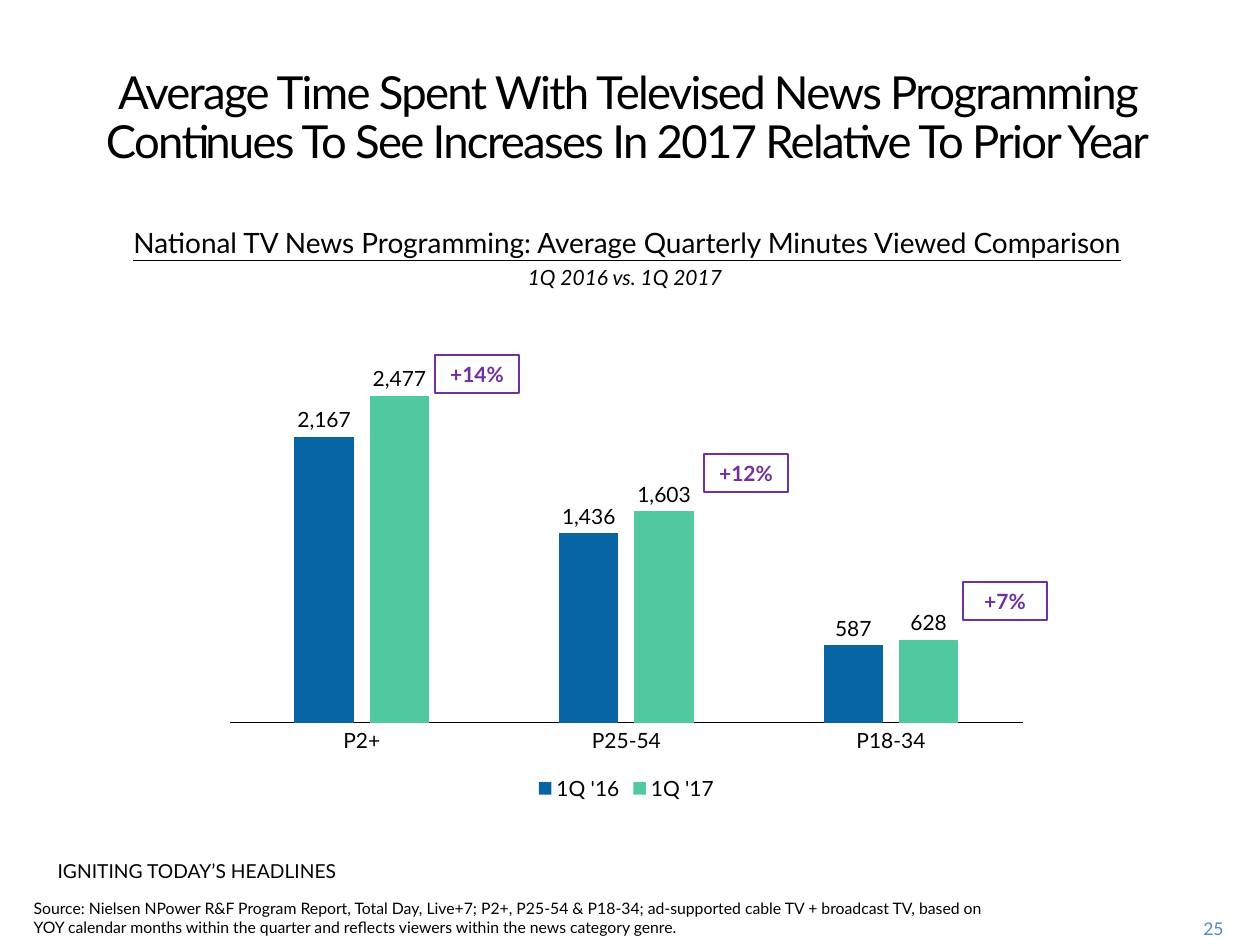
import pptx
import pptx.chart.data
import pptx.dml.color
import pptx.enum.chart
import pptx.enum.shapes
import pptx.enum.text
import pptx.util
import lxml.etree

SCALE = 914400 / 126
THEME = {
    "font": "Lato",
    "black": "000000", "purple": "7030A0", "page": "508ABA",
    "series": ["0765A3", "50C8A0"],
    "title": 26, "heading": 16, "label": 12, "tagline": 11, "number": 10, "source": 9,
}
ALIGN = pptx.enum.text.PP_ALIGN
ANCHOR = pptx.enum.text.MSO_ANCHOR


def place(shape, left, top, width, height):
    """Move a shape to a box given in px."""
    for name, value in zip(("left", "top", "width", "height"), (left, top, width, height)):
        setattr(shape, name, round(value * SCALE))


def write(shape, lines, align=ALIGN.LEFT, anchor=ANCHOR.TOP, color="black", wrap=True):
    """Fill a shape with unbulleted paragraphs of (text, size, extra font values)."""
    frame = shape.text_frame
    frame.word_wrap = wrap
    frame.auto_size = pptx.enum.text.MSO_AUTO_SIZE.NONE
    frame.vertical_anchor = anchor
    for index, (text, size, extra) in enumerate(lines):
        paragraph = frame.add_paragraph() if index else frame.paragraphs[0]
        properties = paragraph._p.get_or_add_pPr()
        properties.set("marL", "0")
        properties.set("indent", "0")
        lxml.etree.SubElement(properties, pptx.oxml.ns.qn("a:buNone"))
        paragraph.alignment = align
        paragraph.space_before = pptx.util.Pt(3 if index else 0)
        font_values = {"name": THEME["font"], "size": pptx.util.Pt(THEME[size]), "bold": False}
        run = paragraph.add_run()
        run.text = text
        for name, value in (font_values | extra).items():
            setattr(run.font, name, value)
        run.font.color.rgb = pptx.dml.color.RGBColor.from_string(THEME[color])


presentation = pptx.Presentation()
presentation.slide_width = pptx.util.Inches(10)
presentation.slide_height = pptx.util.Inches(7.5)
slide = presentation.slides.add_slide(presentation.slide_layouts.get_by_name("Comparison"))
heading, source, tagline, unused = [slide.placeholders[index] for index in (1, 2, 3, 4)]
unused._element.getparent().remove(unused._element)

# Title, chart heading and footer texts
title = slide.shapes.title
place(title, 21, 63, 1213, 86)
write(title, [("Average Time Spent With Televised News Programming Continues To See "
               "Increases In 2017 Relative To Prior Year", "title", {})], ALIGN.CENTER)
title_paragraph = title.text_frame.paragraphs[0]
title_paragraph.line_spacing = pptx.util.Pt(28)
title_paragraph.runs[0]._r.get_or_add_rPr().set("spc", "-100")

place(heading, 21, 219, 1213, 50)
write(heading, [
    ("National TV News Programming: Average Quarterly Minutes Viewed Comparison",
     "heading", {"underline": True}),
    ("1Q 2016 vs. 1Q 2017 ", "label", {"italic": True}),
], ALIGN.CENTER)

place(tagline, 45, 853, 343, 59)
write(tagline, [("IGNITING TODAY’S HEADLINES", "tagline", {})])

place(source, 21, 892, 995, 44)
write(source, [("Source: Nielsen NPower R&F Program Report, Total Day, Live+7; P2+, P25-54 & P18-34; "
                "ad-supported cable TV + broadcast TV, based on YOY calendar months within the "
                "quarter and reflects viewers within the news category genre.", "source", {})])

page_number = slide.shapes.add_textbox(0, 0, 0, 0)
place(page_number, 1159, 912, 77, 32)
write(page_number, [("25", "number", {})], ALIGN.RIGHT, ANCHOR.MIDDLE, "page")

# Column chart
chart_data = pptx.chart.data.CategoryChartData(number_format="#,##0")
chart_data.categories = ["P2+", "P25-54", "P18-34"]
chart_data.add_series("1Q '16", [2167, 1436, 587])
chart_data.add_series("1Q '17", [2477, 1603, 628])
chart_frame = slide.shapes.add_chart(
    pptx.enum.chart.XL_CHART_TYPE.COLUMN_CLUSTERED, 0, 0, 0, 0, chart_data)
place(chart_frame, 213, 317, 827, 489)
chart = chart_frame.chart
black = pptx.dml.color.RGBColor.from_string(THEME["black"])
chart.has_title = False
chart.font.name = THEME["font"]
chart.font.size = pptx.util.Pt(THEME["label"])
chart.font.color.rgb = black

chart.has_legend = True
chart.legend.position = pptx.enum.chart.XL_LEGEND_POSITION.BOTTOM
chart.legend.include_in_layout = False

value_axis = chart.value_axis
axis_values = {"minimum_scale": 0, "maximum_scale": 3000,
               "has_major_gridlines": False, "visible": False}
for name, value in axis_values.items():
    setattr(value_axis, name, value)
category_axis = chart.category_axis
category_axis.major_tick_mark = pptx.enum.chart.XL_TICK_MARK.NONE
category_axis.format.line.color.rgb = black
category_axis.format.line.width = pptx.util.Pt(0.75)

plot = chart.plots[0]
plot_values = {"gap_width": 219, "overlap": -27, "vary_by_categories": False,
               "has_data_labels": True}
for name, value in plot_values.items():
    setattr(plot, name, value)
label_values = {"show_value": True, "number_format": "#,##0", "number_format_is_linked": False,
                "position": pptx.enum.chart.XL_LABEL_POSITION.OUTSIDE_END}
for name, value in label_values.items():
    setattr(plot.data_labels, name, value)
for series, color in zip(plot.series, THEME["series"]):
    series.format.fill.solid()
    series.format.fill.fore_color.rgb = pptx.dml.color.RGBColor.from_string(color)

# Fixed plot area, as fractions of the chart
plot_area = chart._chartSpace.chart.plotArea
for old_layout in plot_area.findall(pptx.oxml.ns.qn("c:layout")):
    plot_area.remove(old_layout)
layout = lxml.etree.Element(pptx.oxml.ns.qn("c:layout"))
manual = lxml.etree.SubElement(layout, pptx.oxml.ns.qn("c:manualLayout"))
for tag, value in {"layoutTarget": "inner", "xMode": "edge", "yMode": "edge",
                   "x": 0.02, "y": 0.02, "w": 0.96, "h": 0.81}.items():
    lxml.etree.SubElement(manual, pptx.oxml.ns.qn("c:" + tag)).set("val", str(value))
plot_area.insert(0, layout)

# Growth callouts
for text, left, top in [("+14%", 435, 355), ("+12%", 704, 454), ("+7%", 963, 582)]:
    callout = slide.shapes.add_shape(pptx.enum.shapes.MSO_SHAPE.RECTANGLE, 0, 0, 0, 0)
    place(callout, left, top, 84, 38)
    callout.shadow.inherit = False
    callout.fill.background()
    callout.line.color.rgb = pptx.dml.color.RGBColor.from_string(THEME["purple"])
    callout.line.width = pptx.util.Pt(0.75)
    write(callout, [(text, "label", {"bold": True})], ALIGN.CENTER, ANCHOR.MIDDLE, "purple", False)

presentation.save("out.pptx")
